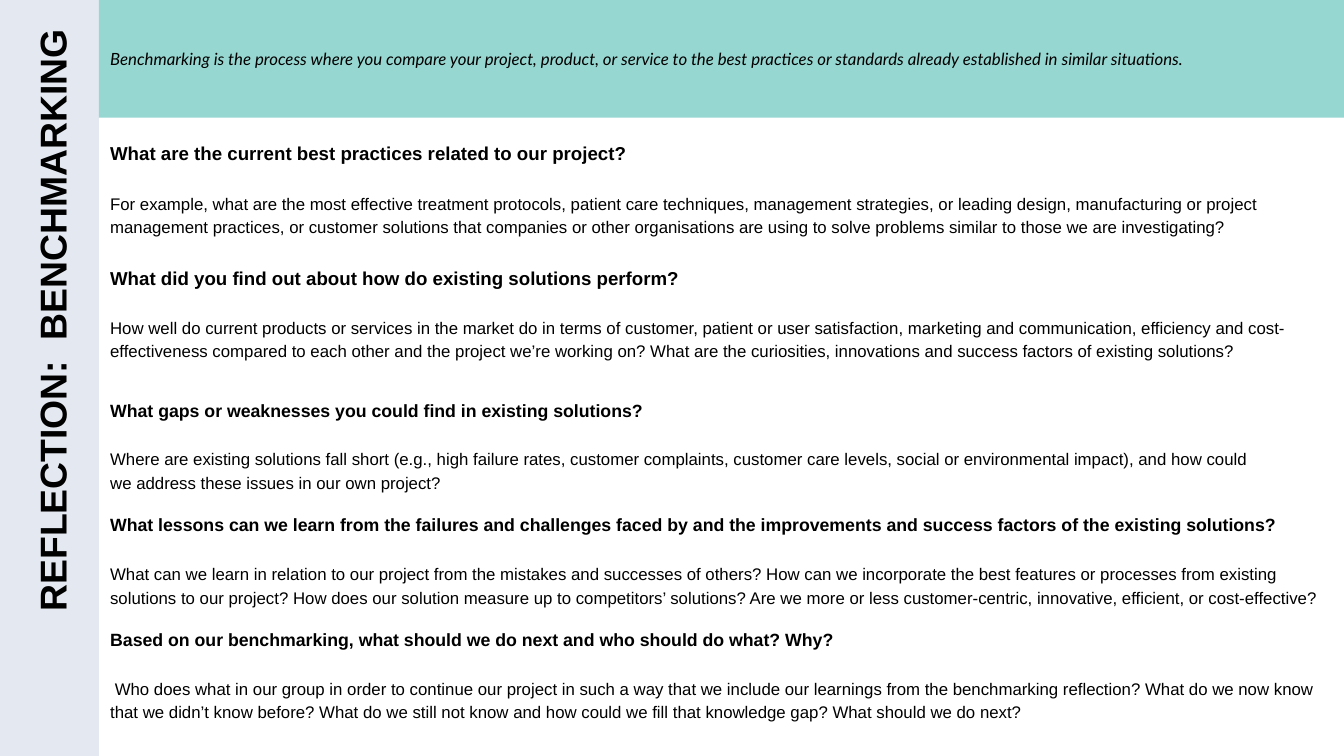
from pptx import Presentation
from pptx.dml.color import RGBColor
from pptx.enum.shapes import MSO_SHAPE
from pptx.enum.text import PP_ALIGN
from pptx.util import Pt

RECTANGLE = MSO_SHAPE.RECTANGLE
LEFT, RIGHT = PP_ALIGN.LEFT, PP_ALIGN.RIGHT
BLACK = RGBColor(0x00, 0x00, 0x00)
PALE_BLUE = RGBColor(0xE4, 0xE8, 0xF0)
TEAL = RGBColor(0x96, 0xD7, 0xD1)

SLIDE_WIDTH, SLIDE_HEIGHT = 1440, 810
SIDEBAR_WIDTH, BANNER_HEIGHT = 106, 126
TEXT_LEFT = 118

presentation = Presentation()
presentation.slide_width = Pt(SLIDE_WIDTH)
presentation.slide_height = Pt(SLIDE_HEIGHT)
slide = presentation.slides.add_slide(presentation.slide_layouts[6])


def add_text_frame(left, top, width, height, rotation=0):
    """Add a wrapping text box without margins and return its text frame."""
    box = slide.shapes.add_textbox(Pt(left), Pt(top), Pt(width), Pt(height))
    box.rotation = rotation
    frame = box.text_frame
    frame.word_wrap = True
    for side in ("left", "top", "right", "bottom"):
        setattr(frame, f"margin_{side}", 0)
    return frame


def write(paragraph, text, line_spacing, alignment=LEFT, **font_format):
    paragraph.text = text
    paragraph.alignment = alignment
    paragraph.line_spacing = Pt(line_spacing)
    values = {"name": "Arial", "bold": False, "italic": False} | font_format
    for name, value in values.items():
        setattr(paragraph.font, name, value)
    paragraph.font.color.rgb = BLACK


# Sidebar and banner
for left, width, height, color in (
    (0, SIDEBAR_WIDTH, SLIDE_HEIGHT, PALE_BLUE),
    (SIDEBAR_WIDTH, SLIDE_WIDTH - SIDEBAR_WIDTH, BANNER_HEIGHT, TEAL),
):
    panel = slide.shapes.add_shape(RECTANGLE, Pt(left), 0, Pt(width), Pt(height))
    panel.shadow.inherit = False
    panel.fill.solid()
    panel.fill.fore_color.rgb = color
    panel.line.fill.background()

title = add_text_frame(-291.6, 346.3, 683.3, 53.3, rotation=270)
write(title.paragraphs[0], "REFLECTION:  BENCHMARKING", 56, RIGHT, size=Pt(40), bold=True)

definition = add_text_frame(TEXT_LEFT, 52.6, 1276.6, 21)
write(
    definition.paragraphs[0],
    "Benchmarking is the process where you compare your project, product, or service "
    "to the best practices or standards already established in similar situations.",
    21.6, name="Lato", size=Pt(18), italic=True,
)

# Top, width, height, heading size, gap under heading, first-line indent, heading, details
questions = [
    (147.6, 1301, 104.4, 20, 28, 0,
     "What are the current best practices related to our project?",
     "For example, what are the most effective treatment protocols, patient care "
     "techniques, management strategies, or leading design, manufacturing or project "
     "management practices, or customer solutions that companies or other organisations "
     "are using to solve problems similar to those we are investigating?"),
    (282.2, 1276.6, 103, 20, 26.6, 0,
     "What did you find out about how do existing solutions perform?",
     "How well do current products or services in the market do in terms of customer, "
     "patient or user satisfaction, marketing and communication, efficiency and "
     "cost-effectiveness compared to each other and the project we’re working on? What "
     "are the curiosities, innovations and success factors of existing solutions?"),
    (424.1, 1220.4, 126, 19, 26.6, 0,
     "What gaps or weaknesses you could find in existing solutions?",
     "Where are existing solutions fall short (e.g., high failure rates, customer "
     "complaints, customer care levels, social or environmental impact), and how could "
     "we address these issues in our own project?"),
    (547.2, 1301, 101.5, 19, 26.6, 0,
     "What lessons can we learn from the failures and challenges faced by and the "
     "improvements and success factors of the existing solutions?",
     "What can we learn in relation to our project from the mistakes and successes of "
     "others? How can we incorporate the best features or processes from existing "
     "solutions to our project? How does our solution measure up to competitors’ "
     "solutions? Are we more or less customer-centric, innovative, efficient, or "
     "cost-effective?"),
    (670.3, 1322, 101.5, 19, 26.6, 5,
     "Based on our benchmarking, what should we do next and who should do what? Why?",
     "Who does what in our group in order to continue our project in such a way that we "
     "include our learnings from the benchmarking reflection? What do we now know that "
     "we didn’t know before? What do we still not know and how could we fill that "
     "knowledge gap? What should we do next?"),
]

for top, width, height, size, gap, indent, heading, details in questions:
    frame = add_text_frame(TEXT_LEFT, top, width, height)
    write(frame.paragraphs[0], heading, size * 1.4, size=Pt(size), bold=True)
    paragraph = frame.add_paragraph()
    write(paragraph, details, 25.2, size=Pt(18))
    paragraph.space_before = Pt(gap)
    if indent:
        paragraph._p.get_or_add_pPr().set("indent", str(Pt(indent)))

presentation.save("out.pptx")
